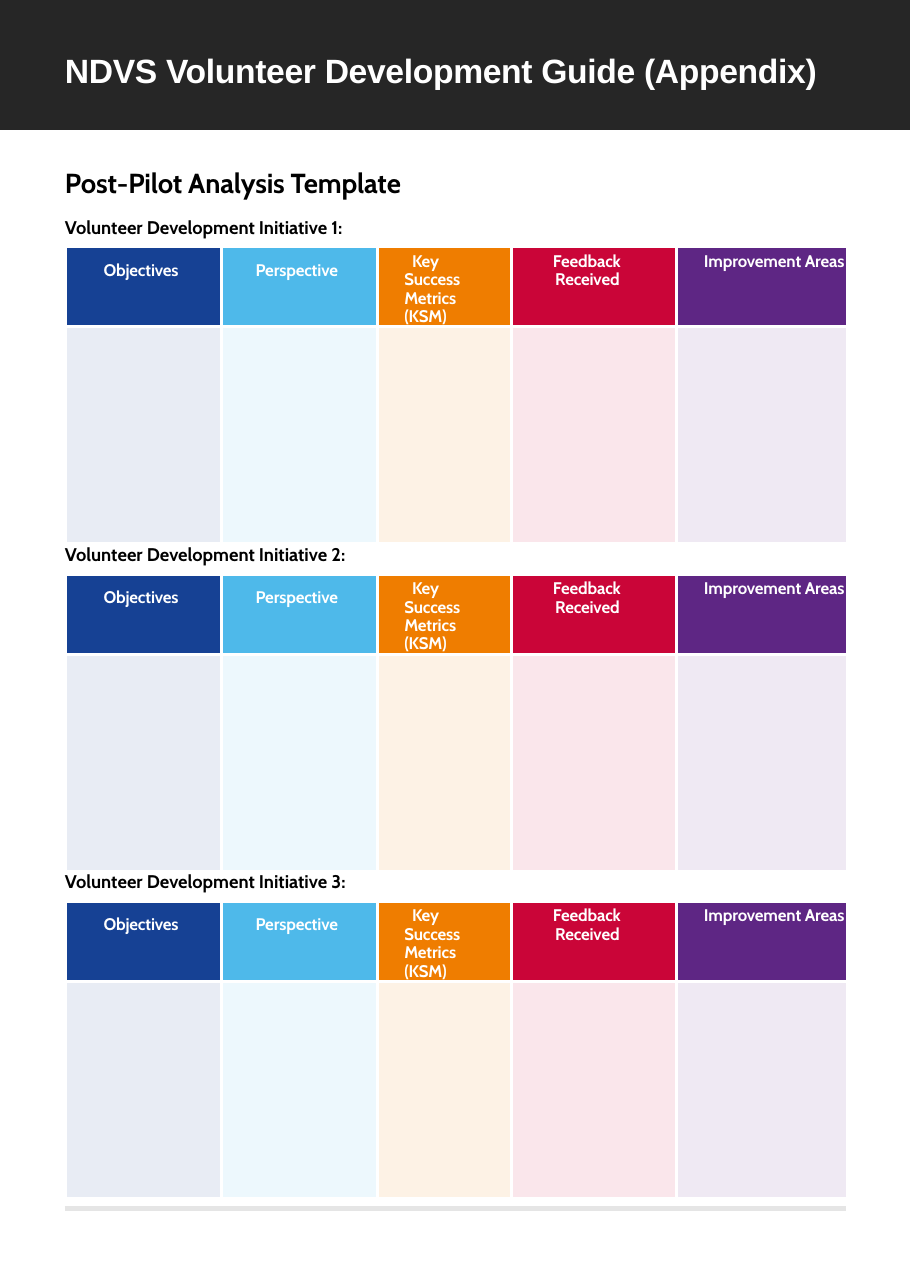
from lxml.etree import SubElement
from pptx import Presentation
from pptx.dml.color import RGBColor
from pptx.enum.shapes import MSO_CONNECTOR, MSO_SHAPE
from pptx.oxml import parse_xml
from pptx.oxml.ns import nsdecls, qn
from pptx.util import Emu, Pt

# Content
TITLE = "NDVS Volunteer Development Guide (Appendix)"
HEADING = "Post-Pilot Analysis Template"
INITIATIVES = [f"Volunteer Development Initiative {number}:" for number in (1, 2, 3)]
# Column: text, width, header colour, body colour, left indent, first-line indent,
# top margin, right margin, line spacing and space before in points
COLUMNS = [
    ("Objectives", 142, "164194", "E8ECF4", 35, 0, 12, 0, None, 8.9),
    ("Perspective", 142, "4EB9EA", "EDF8FD", 31, 0, 12, 0, None, 8.9),
    ("Key Success Metrics (KSM)", 121, "EF7D00", "FDF2E5", 24, 7, 6, 30, 12, 4.3),
    ("Feedback Received", 150, "CA0538", "FAE6EB", 40, -2, 6, 0, 12, 4.3),
    ("Improvement Areas", 155, "5E2684", "EFE9F3", 52, -27, 6, 0, 12, 4.3),
]

# Theme
THEME = {
    "band": "262626", "rule": "E5E5E5", "white": "FFFFFF", "black": "000000",
    "title": {"name": "Arial", "size": Pt(22), "bold": True},
    "heading": {"name": "Cabin", "size": Pt(18), "bold": True},
    "label": {"name": "Cabin", "size": Pt(12), "bold": True},
    "header": {"name": "Cabin", "size": Pt(11), "bold": True},
    "border": Pt(2.25), "rule_width": Pt(3),
}

# Layout in px, 100 px to the inch
PAGE_WIDTH, PAGE_HEIGHT = 826, 1169
BAND_HEIGHT = 118
TEXT_LEFT, TEXT_WIDTH = 58, 722
TABLE_LEFT = 59
FIRST_LABEL_TOP, LABEL_HEIGHT, LABEL_TO_TABLE = 195, 23, 29
HEADER_HEIGHT, BODY_HEIGHT = 72, 197
SECTION_PITCH = 297
RULE_TOP, RULE_WIDTH = 1097, 709


def px(length):
    return Emu(length * 9144)


def color(key):
    return RGBColor.from_string(THEME.get(key, key))


def apply(target, values):
    for name, value in values.items():
        setattr(target, name, value)


def write(paragraph, text, style, text_color, tracking, indent=1, first_line=0):
    run = paragraph.add_run()
    run.text = text
    apply(run.font, THEME[style])
    run.font.color.rgb = color(text_color)
    run.font._element.set("spc", str(tracking))
    properties = paragraph._p.get_or_add_pPr()
    properties.set("marL", str(px(indent)))
    properties.set("indent", str(px(first_line)))


def add_text(slide, text, top, height, style, text_color, tracking=-10):
    box = slide.shapes.add_textbox(px(TEXT_LEFT), px(top), px(TEXT_WIDTH), px(height))
    apply(box.text_frame, {"word_wrap": True, "margin_left": 0, "margin_top": px(1),
                           "margin_right": 0, "margin_bottom": 0})
    paragraph = box.text_frame.paragraphs[0]
    paragraph.space_before = Pt(1)
    write(paragraph, text, style, text_color, tracking)


def paint_cell(cell, fill):
    cell.fill.solid()
    cell.fill.fore_color.rgb = color(fill)
    properties = cell._tc.get_or_add_tcPr()
    for position, side in enumerate(("lnL", "lnR", "lnT", "lnB")):
        properties.insert(position, parse_xml(
            f'<a:{side} {nsdecls("a")} w="{THEME["border"]}"><a:solidFill>'
            f'<a:srgbClr val="{THEME["white"]}"/></a:solidFill></a:{side}>'))


def add_analysis_table(slide, top):
    width = sum(column[1] for column in COLUMNS)
    frame = slide.shapes.add_table(2, len(COLUMNS), px(TABLE_LEFT), px(top), px(width),
                                   px(HEADER_HEIGHT + BODY_HEIGHT))
    table = frame.table
    apply(table, {"first_row": False, "horz_banding": False})
    for row, height in zip(table.rows, (HEADER_HEIGHT, BODY_HEIGHT)):
        row.height = px(height)
    for index, column in enumerate(COLUMNS):
        (text, width, header_fill, body_fill, indent, first_line,
         margin_top, margin_right, line_spacing, space_before) = column
        table.columns[index].width = px(width)
        header, body = table.cell(0, index), table.cell(1, index)
        apply(header, {"margin_left": 0, "margin_top": px(margin_top),
                       "margin_right": px(margin_right), "margin_bottom": 0})
        paragraph = header.text_frame.paragraphs[0]
        apply(paragraph, {"space_before": Pt(space_before),
                          "line_spacing": Pt(line_spacing) if line_spacing else None})
        write(paragraph, text, "header", "white", -10, indent, first_line)
        paint_cell(header, header_fill)
        paint_cell(body, body_fill)


def main():
    presentation = Presentation()
    apply(presentation, {"slide_width": px(PAGE_WIDTH), "slide_height": px(PAGE_HEIGHT)})
    slide = presentation.slides.add_slide(presentation.slide_layouts[6])

    # Title band
    band = slide.shapes.add_shape(MSO_SHAPE.RECTANGLE, 0, 0, px(PAGE_WIDTH), px(BAND_HEIGHT))
    band.shadow.inherit = False
    band.fill.solid()
    band.fill.fore_color.rgb = color("band")
    band.line.fill.background()
    add_text(slide, TITLE, 44, 38, "title", "white", -20)

    # Heading and one table per initiative
    add_text(slide, HEADING, 150, 32, "heading", "black")
    for index, initiative in enumerate(INITIATIVES):
        top = FIRST_LABEL_TOP + index * SECTION_PITCH
        add_text(slide, initiative, top, LABEL_HEIGHT, "label", "black", 0)
        add_analysis_table(slide, top + LABEL_TO_TABLE)

    # Footer rule
    rule = slide.shapes.add_connector(MSO_CONNECTOR.STRAIGHT, px(TABLE_LEFT), px(RULE_TOP),
                                      px(TABLE_LEFT + RULE_WIDTH), px(RULE_TOP))
    rule.line.color.rgb = color("rule")
    rule.line.width = THEME["rule_width"]
    SubElement(rule._element.spPr, qn("a:effectLst"))

    presentation.save("out.pptx")


if __name__ == "__main__":
    main()
